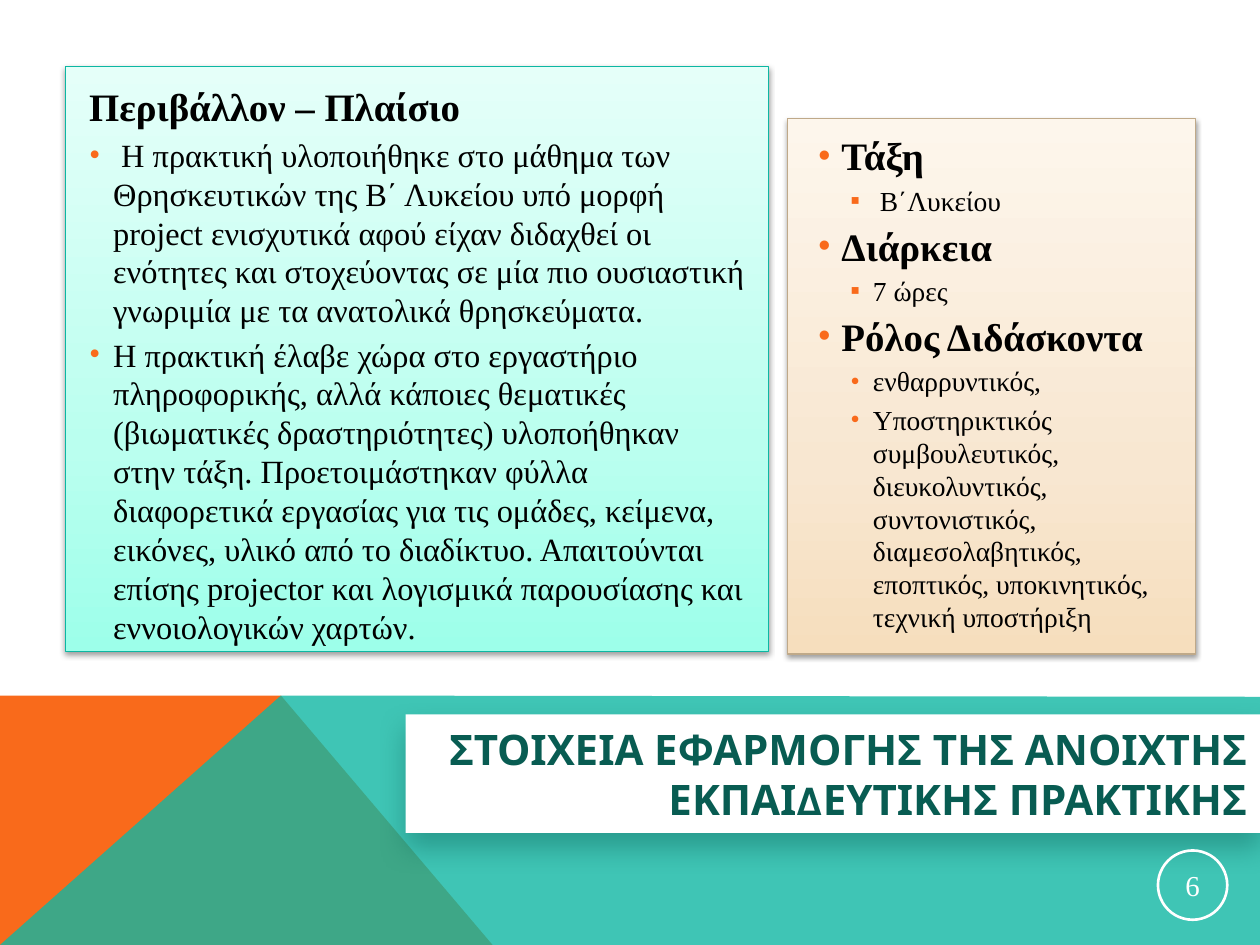
from typing import NamedTuple

from lxml.etree import SubElement
from pptx import Presentation
from pptx.dml.color import RGBColor
from pptx.enum.shapes import MSO_SHAPE
from pptx.enum.text import MSO_ANCHOR, MSO_AUTO_SIZE, PP_ALIGN
from pptx.oxml.ns import qn
from pptx.util import Inches, Pt

ORANGE, TEAL, DARK_TEAL = "F96A1B", "10B7A3", "085C52"
BLACK, WHITE = "000000", "FFFFFF"
SERIF = "Times New Roman"


class Box(NamedTuple):
    left: float
    top: float
    width: float
    height: float

    def lengths(self) -> list:
        return [Inches(value) for value in self]


class Style(NamedTuple):
    size: float
    bold: bool
    level: int
    bullet: str
    margin: float
    indent: float


class Panel(NamedTuple):
    frame: Box
    gradient: list
    border: str
    text_area: Box
    content: list


class Shadow(NamedTuple):
    color: str
    opacity: int
    blur: float
    distance: float


HEADING = Style(22.2, True, 0, "", 0.38, -0.38)
POINT = Style(18.5, False, 1, "•", 0.19, -0.19)
TOPIC = Style(22.2, True, 1, "•", 0.19, -0.19)
DETAIL = Style(15.7, False, 2, "▪", 0.44, -0.18)
ROLE = DETAIL._replace(bullet="•")

PANEL_SHADOW = Shadow(BLACK, 38, 3.1, 1.6)
TITLE_SHADOW = Shadow(DARK_TEAL, 40, 16, 8)

PANELS = [
    Panel(
        Box(6.25, 0.94, 3.24, 4.25),
        [(0, "F6DEBD"), (35, "F8E7D1"), (100, "FDF6EC")],
        "BFA989",
        Box(6.39, 1, 3.03, 4.06),
        [
            (TOPIC, "Τάξη"),
            (DETAIL, " Β΄Λυκείου"),
            (TOPIC, "Διάρκεια"),
            (DETAIL, "7 ώρες"),
            (TOPIC, "Ρόλος Διδάσκοντα"),
            (ROLE, "ενθαρρυντικός,"),
            (ROLE, "Υποστηρικτικός συμβουλευτικός, διευκολυντικός, συντονιστικός, "
                   "διαμεσολαβητικός, εποπτικός, υποκινητικός, τεχνική υποστήριξη"),
        ],
    ),
    Panel(
        Box(0.52, 0.53, 5.58, 4.64),
        [(0, "9DFFEA"), (35, "BAFFEF"), (100, "E5FFF9")],
        "0CB7A3",
        Box(0.61, 0.61, 5.42, 4.52),
        [
            (HEADING, "Περιβάλλον – Πλαίσιο"),
            (POINT, " Η πρακτική υλοποιήθηκε στο μάθημα των Θρησκευτικών της Β΄ Λυκείου "
                    "υπό μορφή project ενισχυτικά αφού είχαν διδαχθεί οι ενότητες και "
                    "στοχεύοντας σε μία πιο ουσιαστική γνωριμία με τα ανατολικά θρησκεύματα."),
            (POINT, "Η πρακτική έλαβε χώρα στο εργαστήριο πληροφορικής, αλλά κάποιες "
                    "θεματικές (βιωματικές δραστηριότητες) υλοποήθηκαν στην τάξη. "
                    "Προετοιμάστηκαν φύλλα διαφορετικά εργασίας για τις ομάδες, κείμενα, "
                    "εικόνες, υλικό από το διαδίκτυο. Απαιτούνται επίσης projector και "
                    "λογισμικά παρουσίασης και εννοιολογικών χαρτών."),
        ],
    ),
]


def rgb(color: str) -> RGBColor:
    return RGBColor.from_string(color)


def add_color(parent, color: str, opacity: int = 100) -> None:
    node = SubElement(parent, qn("a:srgbClr"), val=color)
    if opacity < 100:
        SubElement(node, qn("a:alpha"), val=str(opacity * 1000))


def cast_shadow(shape, shadow: Shadow) -> None:
    shape.shadow.inherit = False
    effects = shape.element.spPr.find(qn("a:effectLst"))
    outer = SubElement(effects, qn("a:outerShdw"), blurRad=str(Pt(shadow.blur)),
                       dist=str(Pt(shadow.distance)), dir="5400000", rotWithShape="0")
    add_color(outer, shadow.color, shadow.opacity)


def fill_gradient(shape, stops: list) -> None:
    """Fill with the stops running from bottom to top."""
    shape.fill.gradient()
    shape.fill.gradient_angle = 90
    stop_list = shape.element.spPr.find(".//" + qn("a:gsLst"))
    stop_list.clear()
    for position, color in stops:
        add_color(SubElement(stop_list, qn("a:gs"), pos=str(position * 1000)), color)


def set_font(font, name: str, size: float, color: str, bold: bool = False) -> None:
    font.name, font.size, font.bold = name, Pt(size), bold
    font.color.rgb = rgb(color)


def add_band(slide, points: list, color: str, opacity: int = 100) -> None:
    corners = [(Inches(x), Inches(y)) for x, y in points]
    builder = slide.shapes.build_freeform(*corners[0])
    builder.add_line_segments(corners[1:])
    band = builder.convert_to_shape()
    band.shadow.inherit = False
    band.line.fill.background()
    band.fill.solid()
    band.fill.fore_color.rgb = rgb(color)
    if opacity < 100:
        fill_color = band.element.spPr.find(qn("a:solidFill")).find(qn("a:srgbClr"))
        SubElement(fill_color, qn("a:alpha"), val=str(opacity * 1000))


def add_panel(slide, panel: Panel) -> None:
    frame = slide.shapes.add_shape(MSO_SHAPE.RECTANGLE, *panel.frame.lengths())
    fill_gradient(frame, panel.gradient)
    frame.line.color.rgb = rgb(panel.border)
    frame.line.width = Pt(0.75)
    cast_shadow(frame, PANEL_SHADOW)


def add_content(slide, panel: Panel) -> None:
    text_frame = slide.shapes.add_textbox(*panel.text_area.lengths()).text_frame
    text_frame.word_wrap = True
    text_frame.text = "\n".join(text for _, text in panel.content)
    for index, (style, _) in enumerate(panel.content):
        paragraph = text_frame.paragraphs[index]
        paragraph.level = style.level
        paragraph.space_before = Pt(3 if index else 0)
        properties = paragraph._p.get_or_add_pPr()
        properties.set("marL", str(Inches(style.margin)))
        properties.set("indent", str(Inches(style.indent)))
        if style.bullet:
            add_color(SubElement(properties, qn("a:buClr")), ORANGE)
            SubElement(properties, qn("a:buFont"), typeface=SERIF)
            SubElement(properties, qn("a:buChar"), char=style.bullet)
        set_font(paragraph.runs[0].font, SERIF, style.size, BLACK, style.bold)


def place_title(slide) -> None:
    title = slide.shapes.title
    title.element.getparent().append(title.element)  # in front of the bands
    title.left, title.top, title.width, title.height = Box(3.22, 5.67, 6.78, 0.94).lengths()
    title.fill.solid()
    title.fill.fore_color.rgb = rgb(WHITE)
    cast_shadow(title, TITLE_SHADOW)
    text_frame = title.text_frame
    text_frame.text = "ΣΤΟΙΧΕΙΑ ΕΦΑΡΜΟΓΗΣ ΤΗΣ ΑΝΟΙΧΤΗΣ ΕΚΠΑΙΔΕΥΤΙΚΗΣ ΠΡΑΚΤΙΚΗΣ"
    text_frame.word_wrap = True
    text_frame.auto_size = MSO_AUTO_SIZE.NONE
    text_frame.vertical_anchor = MSO_ANCHOR.MIDDLE
    paragraph = text_frame.paragraphs[0]
    paragraph.alignment = PP_ALIGN.RIGHT
    set_font(paragraph.runs[0].font, "Karla", 24, DARK_TEAL, True)


def add_page_number(slide, number: str) -> None:
    badge = slide.shapes.add_shape(MSO_SHAPE.OVAL, *Box(9.19, 6.75, 0.55, 0.55).lengths())
    badge.shadow.inherit = False
    badge.fill.background()
    badge.line.color.rgb = rgb(WHITE)
    badge.line.width = Pt(1.5)
    text_frame = badge.text_frame
    text_frame.margin_left = text_frame.margin_right = Inches(0.01)
    text_frame.margin_top = text_frame.margin_bottom = Inches(0.01)
    text_frame.vertical_anchor = MSO_ANCHOR.MIDDLE
    text_frame.text = number
    paragraph = text_frame.paragraphs[0]
    paragraph.alignment = PP_ALIGN.CENTER
    set_font(paragraph.runs[0].font, SERIF, 16.5, WHITE)


def main() -> None:
    deck = Presentation()
    deck.slide_width, deck.slide_height = Inches(10), Inches(7.5)
    slide = deck.slides.add_slide(deck.slide_layouts[5])
    add_band(slide, [(0, 7.5), (0, 5.52), (2.23, 5.52), (3.91, 7.5)], ORANGE)
    add_band(slide, [(0, 7.5), (2.23, 5.52), (10, 5.53), (10, 7.5)], TEAL, 80)
    for panel in PANELS:
        add_panel(slide, panel)
    place_title(slide)
    for panel in reversed(PANELS):
        add_content(slide, panel)
    add_page_number(slide, "6")
    deck.save("out.pptx")


if __name__ == "__main__":
    main()
